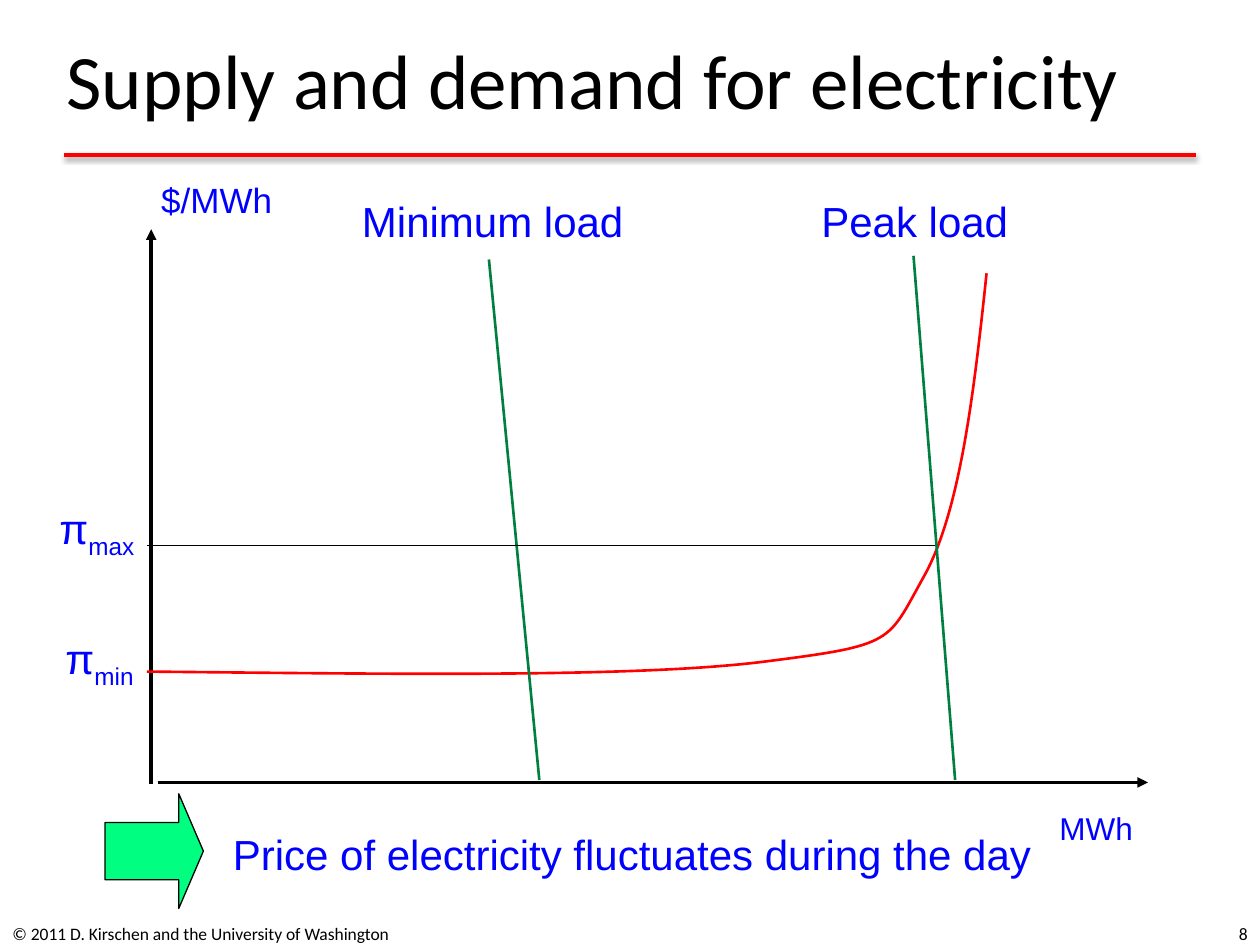
from lxml import etree
from pptx import Presentation
from pptx.dml.color import RGBColor
from pptx.enum.shapes import MSO_CONNECTOR, MSO_SHAPE
from pptx.enum.text import MSO_ANCHOR, PP_ALIGN
from pptx.oxml.ns import qn
from pptx.util import Pt

BLACK = RGBColor(0, 0, 0)
RED = RGBColor(0xFF, 0, 0)
BLUE = RGBColor(0, 0, 0xFF)
GREEN = RGBColor(0, 0x80, 0x40)
MINT = RGBColor(0, 0xFF, 0x80)


def add_text(page, box, text, size, color=BLUE, font="Arial", align=PP_ALIGN.LEFT,
             anchor=MSO_ANCHOR.MIDDLE, wrap=False, subscript=None):
    frame = page.shapes.add_textbox(*map(Pt, box)).text_frame
    frame.word_wrap = wrap
    frame.vertical_anchor = anchor
    para = frame.paragraphs[0]
    para.alignment = align
    para.font.name, para.font.size = font, Pt(size)
    para.font.color.rgb = color
    para.add_run().text = text
    if subscript:
        span = para.add_run()
        span.text = subscript
        span._r.get_or_add_rPr().set("baseline", "-25000")
    return frame


def add_line(page, start, end, color, width, arrow=False):
    line = page.shapes.add_connector(MSO_CONNECTOR.STRAIGHT, *map(Pt, start + end))
    line.line.color.rgb = color
    line.line.width = Pt(width)
    if arrow:
        etree.SubElement(line.get_or_add_ln(), qn("a:tailEnd"), type="triangle")
    return etree.SubElement(line._element.spPr, qn("a:effectLst"))


def add_curve(page, points, color, width):
    """Draw a Bézier curve: a start point, then three points for each segment."""
    builder = page.shapes.build_freeform(*map(Pt, points[0]))
    builder.add_line_segments([(Pt(x), Pt(y)) for x, y in points[1:]], close=False)
    curve = builder.convert_to_shape()
    steps = list(curve._element.iter(qn("a:lnTo")))
    for i in range(0, len(steps), 3):
        bezier = etree.Element(qn("a:cubicBezTo"))
        steps[i].addprevious(bezier)
        for step in steps[i:i + 3]:
            bezier.append(step[0])
            step.getparent().remove(step)
    curve.fill.background()
    curve.line.color.rgb = color
    curve.line.width = Pt(width)
    curve.shadow.inherit = False


def add_header(page, box):
    left, top, width, height = box
    effects = add_line(page, (left + 5.7, top + 70.6), (left + 652.3, top + 70.6), RED, 2)
    shadow = etree.SubElement(effects, qn("a:outerShdw"), blurRad=str(Pt(3.1)),
                              dist=str(Pt(1.6)), dir="5400000", rotWithShape="0")
    shade = etree.SubElement(shadow, qn("a:srgbClr"), val="000000")
    etree.SubElement(shade, qn("a:alpha"), val="38000")
    add_text(page, box, "Supply and demand for electricity", 44, BLACK, "Calibri", wrap=True)


def add_market_graph(page, box):
    left, top, width, height = box

    def at(x, y):
        return left + x, top + y

    # Axes and their units
    add_line(page, at(6, height), at(width, height), BLACK, 2, arrow=True)
    add_line(page, at(2.4, height + 0.7), at(2.4, 33), BLACK, 2, arrow=True)
    add_text(page, at(1, 0.6) + (77.8, 31), "$/MWh", 20, anchor=MSO_ANCHOR.TOP, wrap=True)
    add_text(page, at(514.3, 360.6) + (56.2, 28.8), "MWh", 18, anchor=MSO_ANCHOR.TOP)

    # Supply curve
    supply = [(0, 285.8), (139.9, 287.2), (280.3, 289.4), (353.8, 280), (427.9, 270.6),
              (422.9, 269.2), (443.8, 231.8), (464.6, 195), (472.6, 126.6), (479.8, 58.2)]
    add_curve(page, [at(x, y) for x, y in supply], RED, 1.5)

    # Demand lines
    for text, label_x, label_width, foot_x, head in (
            ("Minimum load", 115.4, 164.2, 224.2, (195.4, 50.3)),
            ("Peak load", 378.2, 121, 461.8, (438, 48.2))):
        add_line(page, at(foot_x, 347.7), at(*head), GREEN, 1.5)
        add_text(page, at(label_x, 10) + (label_width, 36), text, 24, align=PP_ALIGN.CENTER)

    # Price levels
    add_line(page, at(450.2, 213.8), at(0.2, 213.8), BLACK, 0.75)
    for name, x, y, label_width in (("max", -59.5, 187.8, 61.9), ("min", -55.9, 262, 57.6)):
        add_text(page, at(x, y) + (label_width, 36), "π", 24,
                 align=PP_ALIGN.CENTER, subscript=name)


def add_conclusion(page, box):
    left, top, width, height = box
    arrow = page.shapes.add_shape(MSO_SHAPE.RIGHT_ARROW, Pt(left), Pt(top), Pt(56.2), Pt(height))
    arrow.adjustments[0], arrow.adjustments[1] = 0.5, 0.25
    arrow.fill.solid()
    arrow.fill.fore_color.rgb = MINT
    arrow.line.color.rgb = BLACK
    arrow.line.width = Pt(0.75)
    arrow.shadow.inherit = False
    add_text(page, (left + 66, top + 16.5, width - 66, 36),
             "Price of electricity fluctuates during the day", 24, wrap=True)


def add_footer(page, box):
    left, top, width, height = box
    for part, text, align in (
            ((left, top, 309, height), "© 2011 D. Kirschen and the University of Washington",
             PP_ALIGN.LEFT),
            ((left + width - 167, top, 167, height), "8", PP_ALIGN.RIGHT)):
        frame = add_text(page, part, text, 10, BLACK, "Calibri", align, wrap=True)
        frame.margin_top = frame.margin_bottom = 0


def main():
    deck = Presentation()
    deck.slide_width, deck.slide_height = Pt(720), Pt(540)
    page = deck.slides.add_slide(deck.slide_layouts[6])
    add_header(page, (31, 18, 673, 54))
    add_market_graph(page, (84, 98, 572, 349.1))
    add_conclusion(page, (60, 453.6, 558, 65.5))
    add_footer(page, (0, 527, 720, 13))
    deck.save("out.pptx")


if __name__ == "__main__":
    main()
